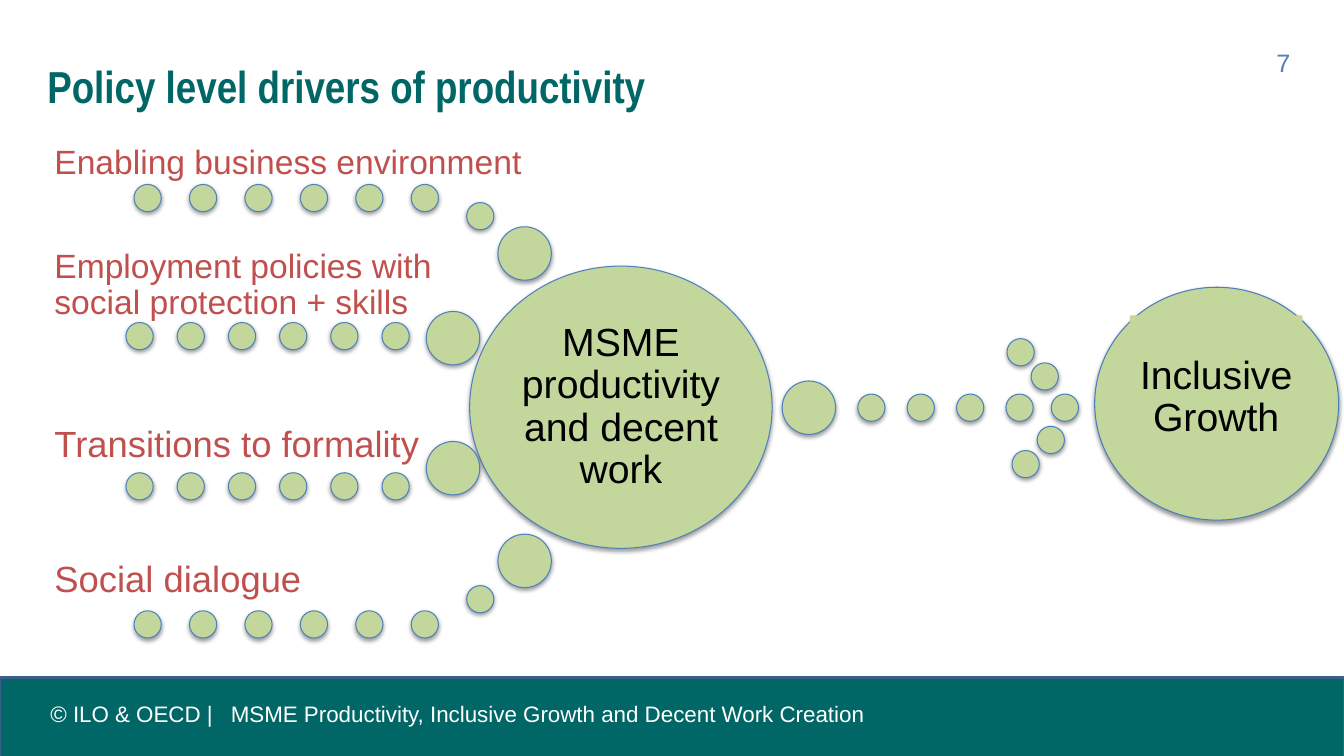
import dataclasses

import lxml.etree
import pptx
import pptx.dml.color
import pptx.enum.shapes
import pptx.enum.text
import pptx.oxml.ns
import pptx.shapes.autoshape
import pptx.slide
import pptx.util

RGB = pptx.dml.color.RGBColor
TEAL = RGB(0x00, 0x66, 0x66)
NAVY = RGB(0x3A, 0x5F, 0x8C)
BLUE = RGB(0x4F, 0x81, 0xBD)
STEEL = RGB(0x4B, 0x7E, 0xBC)
LIME = RGB(0xC3, 0xD6, 0x9B)
RED = RGB(0xC0, 0x50, 0x4D)
BLACK = RGB(0x00, 0x00, 0x00)
WHITE = RGB(0xFF, 0xFF, 0xFF)

ALIGN = pptx.enum.text.PP_ALIGN
ANCHOR = pptx.enum.text.MSO_ANCHOR
KIND = pptx.enum.shapes.MSO_SHAPE

CELL = pptx.util.Inches(0.1)
COLS = 133.33
ROWS = 75
DOT = 2.7
BALL = 5.3
TIGHT = 0.4


@dataclasses.dataclass(frozen=True)
class Box:
    col: float
    row: float
    wide: float
    high: float

    def span(self) -> list[int]:
        return [round(CELL * n) for n in dataclasses.astuple(self)]


@dataclasses.dataclass(frozen=True)
class Style:
    size: float
    color: RGB
    face: str = "Arial"
    bold: bool = False
    align: ALIGN = ALIGN.LEFT
    anchor: ANCHOR = ANCHOR.TOP
    lead: float | pptx.util.Pt | None = None
    inset: float = 0


@dataclasses.dataclass(frozen=True)
class Driver:
    label: str
    box: Box
    size: int
    first: float
    step: float
    row: float
    ball: tuple[float, float]
    bend: tuple[float, float] | None = None


CORE = Style(28, BLACK, align=ALIGN.CENTER, anchor=ANCHOR.MIDDLE, lead=0.9, inset=TIGHT)

DRIVERS = [
    Driver("Enabling business environment", Box(5.4, 11.3, 47.6, 6.7), 24,
           13.3, 5.5, 18.3, (49.4, 22.5), (46.3, 20.1)),
    Driver("Employment policies with social protection + skills",
           Box(5.4, 25.2, 42.3, 6.7), 24, 12.5, 5.08, 32, (42.3, 30.9)),
    Driver("Transitions to formality", Box(5.4, 39.5, 40, 6.7), 26,
           12.5, 5.08, 46.9, (42.3, 43.8)),
    Driver("Social dialogue", Box(5.4, 52.9, 50.1, 6.7), 26,
           13.3, 5.5, 60.6, (49.4, 53), (46.3, 58.1)),
]
ARROW = [(85.1 + 4.9 * i, 39.1) for i in range(4)]
HEAD = [(104.3, 39.1), (99.9, 33.6), (102.3, 36), (102.9, 42.3), (100.4, 44.7)]


def write(shape: pptx.shapes.autoshape.Shape, text: str, style: Style) -> None:
    frame = shape.text_frame
    frame.text = text
    frame.word_wrap = True
    frame.vertical_anchor = style.anchor
    pad = round(CELL * style.inset)
    frame.margin_left = frame.margin_right = pad
    frame.margin_top = frame.margin_bottom = pad
    para = frame.paragraphs[0]
    para.alignment = style.align
    if style.lead is not None:
        para.line_spacing = style.lead
    for run in para.runs:
        run.font.size = pptx.util.Pt(style.size)
        run.font.name = style.face
        run.font.bold = style.bold
        run.font.color.rgb = style.color


def label(slide: pptx.slide.Slide, box: Box, text: str,
          style: Style) -> pptx.shapes.autoshape.Shape:
    shape = slide.shapes.add_textbox(*box.span())
    write(shape, text, style)
    return shape


def block(slide: pptx.slide.Slide, kind: KIND, box: Box, fill: RGB,
          line: RGB | None = None,
          weight: float = 0.75) -> pptx.shapes.autoshape.Shape:
    shape = slide.shapes.add_shape(kind, *box.span())
    shape.shadow.inherit = False
    shape.fill.solid()
    shape.fill.fore_color.rgb = fill
    if line is None:
        shape.line.fill.background()
    else:
        shape.line.color.rgb = line
        shape.line.width = pptx.util.Pt(weight)
    return shape


def disc(slide: pptx.slide.Slide, box: Box, line: RGB = BLUE) -> None:
    shape = block(slide, KIND.OVAL, box, LIME, line)
    name = pptx.oxml.ns.qn
    effect = shape.element.spPr.find(name("a:effectLst"))
    shade = lxml.etree.SubElement(
        effect, name("a:outerShdw"), blurRad=str(pptx.util.Pt(3.1)),
        dist=str(pptx.util.Pt(1.6)), dir="5400000", rotWithShape="0")
    tint = lxml.etree.SubElement(shade, name("a:srgbClr"), val=str(BLACK))
    lxml.etree.SubElement(tint, name("a:alpha"), val="38000")


def dots(slide: pptx.slide.Slide, spots: list[tuple[float, float]],
         size: float = DOT) -> None:
    for col, row in spots:
        disc(slide, Box(col, row, size, size))


def trail(slide: pptx.slide.Slide, item: Driver) -> None:
    dots(slide, [item.ball], BALL)
    spots = [(item.first + item.step * i, item.row) for i in range(6)]
    dots(slide, spots + ([item.bend] if item.bend else []))
    label(slide, item.box, item.label,
          Style(item.size, RED, anchor=ANCHOR.BOTTOM, lead=0.9))


def footer(slide: pptx.slide.Slide) -> None:
    block(slide, KIND.RECTANGLE, Box(0, 67.2, COLS, 7.9), TEAL, NAVY, 2)
    note = label(slide, Box(5, 69.4, 96.9, 2.8),
                 "© ILO & OECD |\tMSME Productivity, Inclusive Growth and Decent Work Creation",
                 Style(16, WHITE, anchor=ANCHOR.MIDDLE))
    name = pptx.oxml.ns.qn
    props = note.text_frame.paragraphs[0]._p.get_or_add_pPr()
    tabs = lxml.etree.SubElement(props, name("a:tabLst"))
    lxml.etree.SubElement(tabs, name("a:tab"), pos=str(round(CELL * 17.9)), algn="l")


def main() -> None:
    deck = pptx.Presentation()
    deck.slide_width = round(CELL * COLS)
    deck.slide_height = CELL * ROWS
    slide = deck.slides.add_slide(deck.slide_layouts[6])
    footer(slide)
    label(slide, Box(4.2, 4.4, 125, 8.5), "Policy level drivers of productivity",
          Style(32, TEAL, "Arial Narrow", True, lead=pptx.util.Pt(45.3), inset=0.5))
    label(slide, Box(122.1, 4.7, 5.9, 3.1), "7", Style(18, BLUE, align=ALIGN.RIGHT))
    dots(slide, ARROW + HEAD)
    dots(slide, [(77.6, 37.8)], BALL)
    disc(slide, Box(46.6, 26.4, 30, 28))
    label(slide, Box(51, 30.5, 21.2, 19.8), "MSME productivity and decent work", CORE)
    for item in DRIVERS:
        trail(slide, item)
    disc(slide, Box(108.6, 28.5, 24.2, 23.1), STEEL)
    goal = block(slide, KIND.RECTANGLE, Box(112.1, 31.3, 17.1, 16.3), LIME)
    write(goal, "Inclusive Growth", CORE)
    deck.save("out.pptx")


if __name__ == "__main__":
    main()
